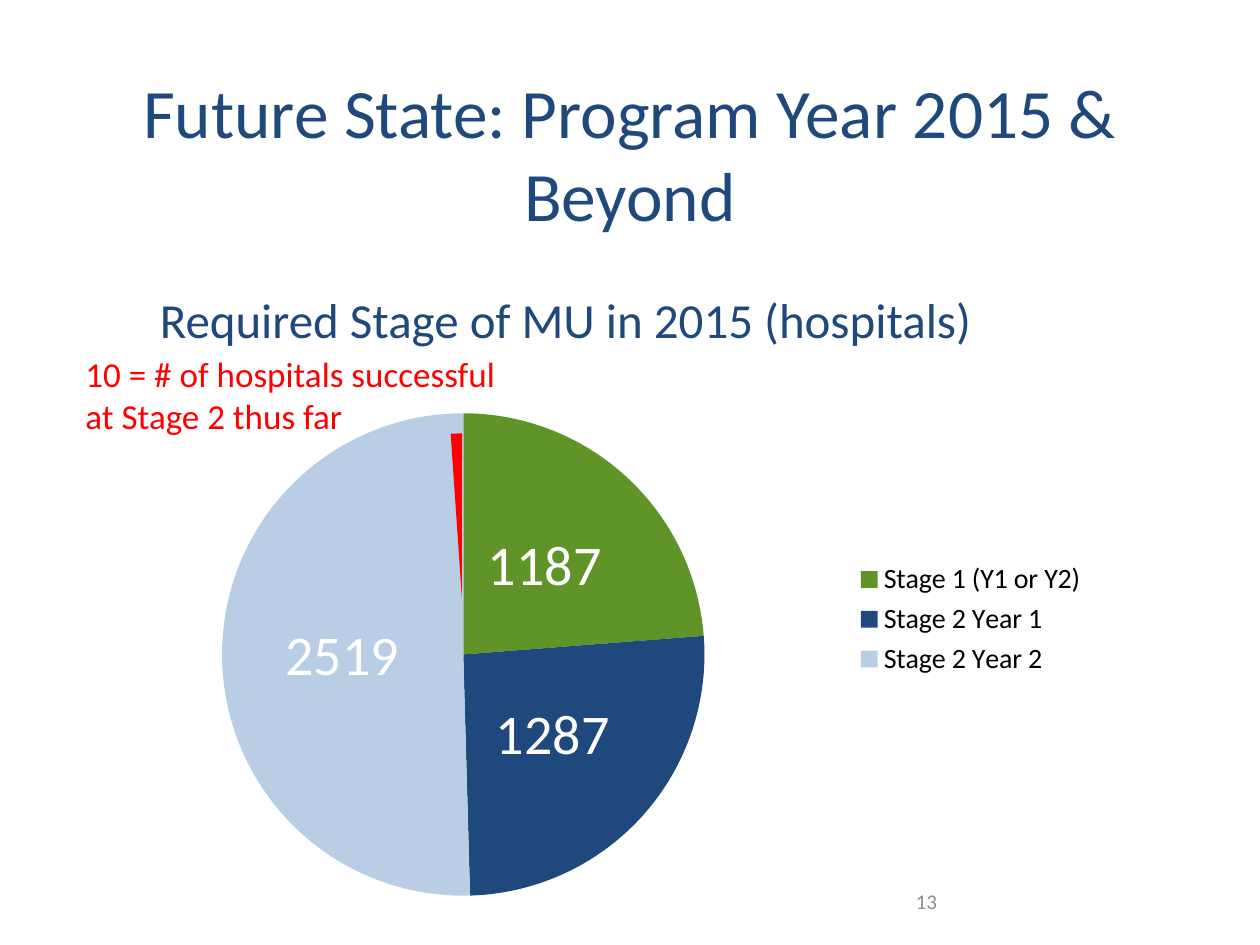
from lxml import etree
from pptx import Presentation
from pptx import util as u
from pptx.chart.data import CategoryChartData
from pptx.dml.color import RGBColor
from pptx.enum import chart as charts, shapes, text
from pptx.oxml.ns import qn

COLORS = {
    "navy": "1F497D",
    "green": "619428",
    "pale": "B9CDE5",
    "red": "FF0000",
    "grey": "8C8C8C",
    "white": "FFFFFF",
    "black": "000000",
}


class SlideBuilder:
    font_name = "Calibri"

    def __init__(self, slide):
        self.slide = slide

    def color(self, name):
        return RGBColor.from_string(COLORS[name])

    def style(self, font, size, color):
        font.name = self.font_name
        font.size = u.Pt(size)
        font.color.rgb = self.color(color)

    def paint(self, fill, color):
        fill.solid()
        fill.fore_color.rgb = self.color(color)

    def add_text(self, box, content, size, color, align=text.PP_ALIGN.LEFT,
                 anchor=text.MSO_ANCHOR.TOP, wrap=True):
        shape = self.slide.shapes.add_textbox(*map(u.Inches, box))
        frame = shape.text_frame
        frame.word_wrap = wrap
        frame.vertical_anchor = anchor
        frame.text = content
        paragraph = frame.paragraphs[0]
        paragraph.alignment = align
        self.style(paragraph.runs[0].font, size, color)

    def add_wedge(self, box, color, rotation, tip):
        shape = self.slide.shapes.add_shape(
            shapes.MSO_SHAPE.ISOSCELES_TRIANGLE, *map(u.Inches, box))
        shape.adjustments[0] = tip
        shape.rotation = rotation
        shape.element.spPr.find(qn("a:xfrm")).set("flipH", "1")
        shape.shadow.inherit = False
        self.paint(shape.fill, color)
        shape.line.fill.background()

    def add_pie(self, box, slices, plot_box):
        data = CategoryChartData()
        data.categories = [name for name, value, color in slices]
        data.add_series("Series 1", [value for name, value, color in slices])
        chart = self.slide.shapes.add_chart(
            charts.XL_CHART_TYPE.PIE, *map(u.Inches, box), data).chart
        chart.has_title = False
        self.style(chart.font, 18, "black")
        chart.has_legend = True
        chart.legend.position = charts.XL_LEGEND_POSITION.RIGHT
        chart.legend.include_in_layout = False
        self.style(chart.legend.font, 16, "black")
        plot = chart.plots[0]
        plot.vary_by_categories = True
        series = plot.series[0]
        for index, (name, value, color) in enumerate(slices):
            self.paint(series.points[index].format.fill, color)
        labels = series.data_labels
        labels.show_value = True
        labels.show_percentage = False
        labels.position = charts.XL_LABEL_POSITION.CENTER
        self.style(labels.font, 32, "white")
        self.place_plot(plot, plot_box)

    def place_plot(self, plot, plot_box):
        area = plot._element.getparent()
        layout = area.find(qn("c:layout"))
        if layout is None:
            layout = etree.Element(qn("c:layout"))
            area.insert(0, layout)
        manual = etree.SubElement(layout, qn("c:manualLayout"))
        settings = [("layoutTarget", "inner"), ("xMode", "edge"), ("yMode", "edge")]
        for tag, value in settings + list(zip("xywh", plot_box)):
            etree.SubElement(manual, qn(f"c:{tag}")).set("val", str(value))


def main():
    presentation = Presentation()
    presentation.slide_width = u.Inches(10)
    presentation.slide_height = u.Inches(7.5)
    builder = SlideBuilder(presentation.slides.add_slide(presentation.slide_layouts[6]))
    middle = text.MSO_ANCHOR.MIDDLE

    builder.add_text((0.5, 0.58, 9, 1.25), "Future State: Program Year 2015 & Beyond",
                     39.6, "navy", align=text.PP_ALIGN.CENTER, anchor=middle)
    builder.add_text((7.17, 6.95, 2.33, 0.4), "13", 12, "grey", anchor=middle)
    slices = [
        ("Stage 1 (Y1 or Y2)", 1187, "green"),
        ("Stage 2 Year 1", 1287, "navy"),
        ("Stage 2 Year 2", 2519, "pale"),
    ]
    builder.add_pie((0.58, 2.58, 8.15, 4.67), slices, (0.02, 0.15, 0.72, 0.82))
    builder.add_text((0.58, 2.75, 3.58, 1.11),
                     "10 = # of hospitals successful at Stage 2 thus far", 20, "red")
    builder.add_wedge((3.6, 3.44, 0.09, 1.3), "red", rotation=178, tip=0.48)
    builder.add_text((1.17, 2.25, 7.42, 0.57), "Required Stage of MU in 2015 (hospitals)",
                     28, "navy", wrap=False)
    presentation.save("out.pptx")


if __name__ == "__main__":
    main()
